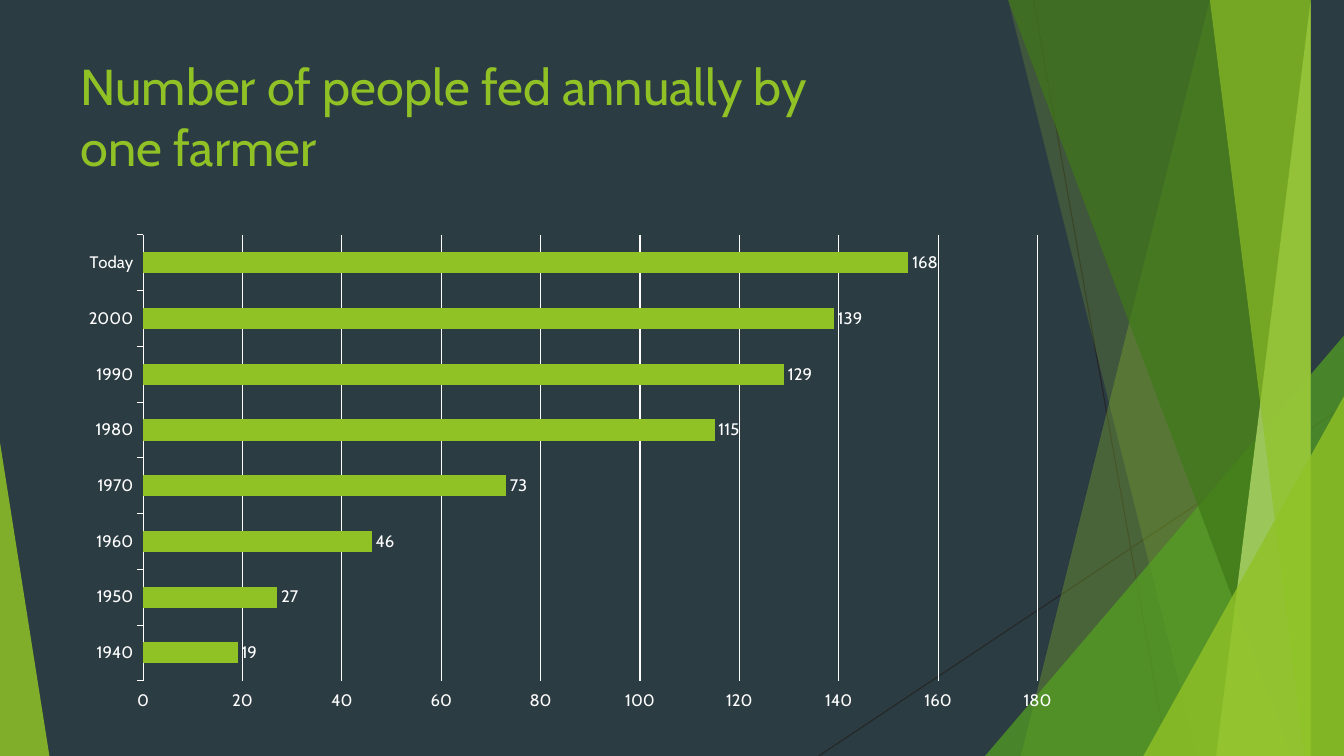
from dataclasses import dataclass

from pptx import Presentation
from pptx.chart.data import CategoryChartData
from pptx.dml.color import RGBColor
from pptx.enum.chart import XL_CHART_TYPE, XL_LABEL_POSITION, XL_TICK_MARK
from pptx.enum.shapes import MSO_CONNECTOR, MSO_SHAPE
from pptx.enum.text import MSO_ANCHOR
from pptx.oxml import parse_xml
from pptx.oxml.ns import nsdecls, qn
from pptx.util import Inches, Pt
from lxml.etree import SubElement

WIDE, HIGH = 13.33, 7.5


@dataclass(frozen=True)
class Theme:
    back: str = "2C3C43"
    thread: str = "262626"
    lime: str = "90C226"
    green: str = "54A021"
    forest: str = "3F7819"
    pale: str = "C0E474"
    white: str = "FFFFFF"
    face: str = "Cabin"
    title: int = 36
    label: int = 12
    hair: float = 0.75


class Deck:
    def __init__(self, theme):
        self.theme = theme
        self.file = Presentation()
        self.file.slide_width, self.file.slide_height = Inches(WIDE), Inches(HIGH)
        self.slide = self.file.slides.add_slide(self.file.slide_layouts[6])
        self.shapes = self.slide.shapes
        self.paint(self.slide.background.fill, theme.back)

    def paint(self, fill, color):
        fill.solid()
        fill.fore_color.rgb = RGBColor.from_string(color)

    def ink(self, line, color):
        line.width = Pt(self.theme.hair)
        self.paint(line.fill, color)

    def type(self, font, size, color):
        font.name, font.size = self.theme.face, Pt(size)
        font.color.rgb = RGBColor.from_string(color)

    def glaze(self, shape, color, alpha):
        """Borderless fill with an opacity in percent."""
        shape.shadow.inherit = False
        shape.line.fill.background()
        self.paint(shape.fill, color)
        tint = shape.fill._xPr.find(qn("a:solidFill"))[0]
        SubElement(tint, qn("a:alpha")).set("val", str(alpha * 1000))

    def thread(self, *ends):
        line = self.shapes.add_connector(MSO_CONNECTOR.STRAIGHT, *map(Inches, ends))
        self.ink(line.line, self.theme.thread)
        SubElement(line._element.spPr, qn("a:effectLst"))

    def shard(self, top, foot, color, alpha):
        """Full-height panel with a slanted left side."""
        rim = -0.01
        pen = self.shapes.build_freeform(top, rim, scale=Inches(1))
        pen.add_line_segments([(WIDE, rim), (WIDE, HIGH), (foot, HIGH)])
        self.glaze(pen.convert_to_shape(), color, alpha)

    def wedge(self, left, top, width, apex, color, alpha):
        """Triangle that stands on the lower slide edge."""
        box = map(Inches, (left, top, width, HIGH - top))
        shape = self.shapes.add_shape(MSO_SHAPE.ISOSCELES_TRIANGLE, *box)
        shape.adjustments[0] = apex
        self.glaze(shape, color, alpha)

    def title(self, lines, *box):
        frame = self.shapes.add_textbox(*map(Inches, box)).text_frame
        frame.word_wrap = True
        frame.vertical_anchor = MSO_ANCHOR.TOP
        para = frame.paragraphs[0]
        para.text = "\v".join(lines)
        self.type(para.font, self.theme.title, self.theme.lime)

    def bars(self, table, notes, plot, *box):
        t = self.theme
        data = CategoryChartData()
        data.categories = list(table)
        data.add_series("Series 1", list(table.values()))
        chart = self.shapes.add_chart(
            XL_CHART_TYPE.BAR_CLUSTERED, *map(Inches, box), data).chart
        chart.has_legend = chart.has_title = False
        self.type(chart.font, 10, t.white)

        # Axes
        years, scale = chart.category_axis, chart.value_axis
        for axis in (years, scale):
            axis.major_tick_mark = XL_TICK_MARK.OUTSIDE
            axis.minor_tick_mark = XL_TICK_MARK.NONE
            self.type(axis.tick_labels.font, t.label, t.white)
        self.ink(years.format.line, t.white)
        scale.format.line.fill.background()
        scale.minimum_scale, scale.maximum_scale, scale.major_unit = 0, 180, 20
        scale.has_major_gridlines = True
        self.ink(scale.major_gridlines.format.line, t.white)

        # Bars and their labels
        group = chart.plots[0]
        group.gap_width, group.vary_by_categories = 165, False
        row = group.series[0]
        row.invert_if_negative = False
        self.paint(row.format.fill, t.lime)
        tags = row.data_labels
        tags.show_value = True
        tags.position = XL_LABEL_POSITION.OUTSIDE_END
        self.type(tags.font, t.label, t.white)
        for spot, text in notes.items():
            tag = row.points[spot].data_label
            para = tag.text_frame.paragraphs[0]
            run = para.add_run()
            run.text = text
            self.type(run.font, t.label, t.white)
            tag.position = XL_LABEL_POSITION.OUTSIDE_END

        # Inner plot area as fractions of the chart
        modes = "".join(f'<c:{k}Mode val="edge"/>' for k in "xy")
        sizes = "".join(f'<c:{k} val="{v}"/>' for k, v in zip("xywh", plot))
        area = chart._chartSpace.chart.plotArea
        for old in area.findall(qn("c:layout")):
            area.remove(old)
        area.insert(0, parse_xml(
            f'<c:layout {nsdecls("c")}><c:manualLayout>'
            f'<c:layoutTarget val="inner"/>{modes}{sizes}'
            '</c:manualLayout></c:layout>'))


def main():
    t = Theme()
    deck = Deck(t)

    # Backdrop
    deck.thread(10.25, 0, 11.58, HIGH)
    deck.thread(WIDE, 4.03, 8.12, HIGH)
    deck.shard(12.28, 10.04, t.lime, 30)
    deck.shard(10.5, 11.83, t.lime, 20)
    deck.wedge(9.77, 3.33, 3.56, 1, t.green, 72)
    deck.shard(10.21, 12.91, t.forest, 70)
    deck.shard(13.03, 11.92, t.pale, 70)
    deck.shard(11.96, 13.18, t.lime, 65)
    deck.wedge(11.34, 3.93, 1.99, 1, t.lime, 80)
    deck.wedge(0, 4.39, 0.49, 0, t.lime, 85)

    # Title
    deck.title(["Number of people fed annually by", "one farmer"],
               0.7, 0.5, 9.4, 1.44)

    # Chart; the last bar carries its own label
    fed = {"1940": 19, "1950": 27, "1960": 46, "1970": 73,
           "1980": 115, "1990": 129, "2000": 139, "Today": 154}
    deck.bars(fed, {7: "168"}, (0.05, 0.045, 0.92, 0.9), 0.88, 2.11, 9.7, 4.94)

    deck.file.save("out.pptx")


if __name__ == "__main__":
    main()
